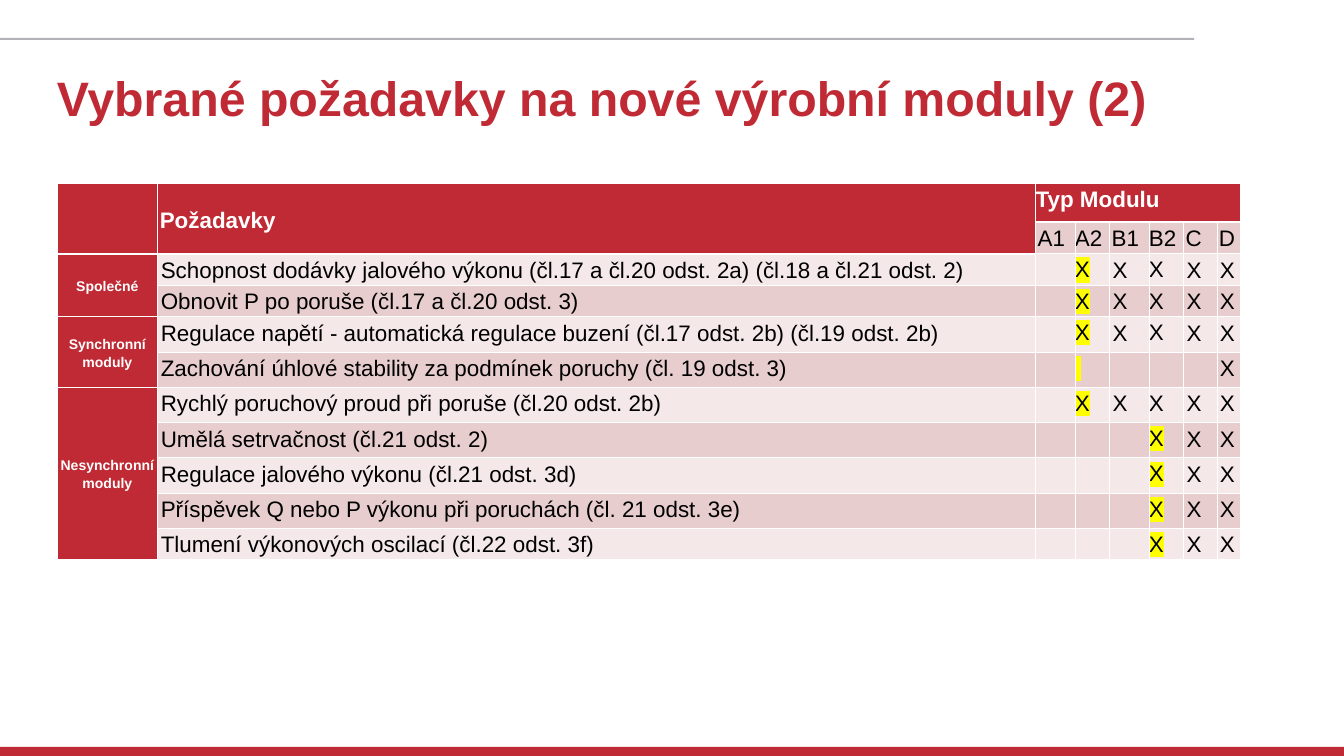
from pptx import Presentation
from pptx.dml.color import RGBColor
from pptx.enum.shapes import MSO_SHAPE
from pptx.enum.text import MSO_ANCHOR, PP_ALIGN
from pptx.util import Inches, Pt
from lxml.etree import SubElement
from pptx.oxml import parse_xml
from pptx.oxml.ns import qn, nsdecls

RED, GRAY, WHITE, BLACK = "BF2A34", "B1B2B7", "FFFFFF", "000000"
DARK, LIGHT, GLOW = "E8CDCE", "F4E8E8", "FFFF00"
COLS = [7.5, 65.32, 2.92, 2.59, 2.92, 2.59, 2.47, 1.72]
ROWS = [5.13] + [4.13] * 3 + [4.67] * 6 + [4.13]
TYPES = ["A1", "A2", "B1", "B2", "C", "D"]
TIGHT = (3, 5)
GROUPS = [
    ("Společné", [
        ("Schopnost dodávky jalového výkonu (čl.17 a čl.20 odst. 2a) (čl.18 a čl.21 odst. 2)", "-HXXXX"),
        ("Obnovit P po poruše (čl.17 a čl.20 odst. 3)", "-HXXXX")]),
    ("Synchronní moduly", [
        ("Regulace napětí - automatická regulace buzení (čl.17 odst. 2b) (čl.19 odst. 2b)", "-HXXXX"),
        ("Zachování úhlové stability za podmínek poruchy (čl. 19 odst. 3)", "-S---X")]),
    ("Nesynchronní moduly", [
        ("Rychlý poruchový proud při poruše (čl.20 odst. 2b)", "-HXXXX"),
        ("Umělá setrvačnost (čl.21 odst. 2)", "---HXX"),
        ("Regulace jalového výkonu (čl.21 odst. 3d)", "---HXX"),
        ("Příspěvek Q nebo P výkonu při poruchách (čl. 21 odst. 3e)", "---HXX"),
        ("Tlumení výkonových oscilací (čl.22 odst. 3f)", "---HXX")]),
]
MARKS = {"-": ("", None), "X": ("X", None), "H": ("X", GLOW), "S": (" ", GLOW)}


def color(code):
    return RGBColor.from_string(code)


class Deck:
    font = "Arial"

    def __init__(self, wide, high):
        self.prs = Presentation()
        self.wide, self.high = Inches(wide), Inches(high)
        self.prs.slide_width, self.prs.slide_height = self.wide, self.high
        self.slide = self.prs.slides.add_slide(self.prs.slide_layouts[6])

    def across(self, share):
        return int(self.wide * share / 100)

    def down(self, share):
        return int(self.high * share / 100)

    def place(self, x, y, w, h):
        return self.across(x), self.down(y), self.across(w), self.down(h)

    def bar(self, area, fill):
        shape = self.slide.shapes.add_shape(MSO_SHAPE.RECTANGLE, *self.place(*area))
        shape.shadow.inherit = False
        shape.fill.solid()
        shape.fill.fore_color.rgb = color(fill)
        shape.line.fill.background()

    def label(self, para, text, size, ink, bold=False, glow=None):
        run = para.add_run()
        run.text = text
        form = {"name": self.font, "size": Pt(size), "bold": bold}
        for key, value in form.items():
            setattr(run.font, key, value)
        run.font.color.rgb = color(ink)
        if glow:
            fill = run._r.get_or_add_rPr().find(qn("a:solidFill"))
            fill.addnext(parse_xml(
                f'<a:highlight {nsdecls("a")}><a:srgbClr val="{glow}"/></a:highlight>'))

    def title(self, area, text):
        frame = self.slide.shapes.add_textbox(*self.place(*area)).text_frame
        form = {"word_wrap": True, "margin_left": 0, "margin_top": 0,
                "margin_right": 0, "margin_bottom": 0}
        for key, value in form.items():
            setattr(frame, key, value)
        self.label(frame.paragraphs[0], text, 69, RED, True)

    def table(self, x, y, cols, rows):
        area = self.place(x, y, sum(cols), sum(rows))
        grid = self.slide.shapes.add_table(len(rows), len(cols), *area).table
        for col, share in zip(grid.columns, cols):
            col.width = self.across(share)
        for row, share in zip(grid.rows, rows):
            row.height = self.down(share)
        return grid

    def cell(self, cell, fill, text="", pad=0.06, thick=1, size=32, ink=BLACK,
             bold=False, glow=None, align=PP_ALIGN.LEFT, anchor=MSO_ANCHOR.TOP):
        props = cell._tc.get_or_add_tcPr()
        for side in "LRTB":
            width = Pt(thick if side == "B" else 1)
            line = SubElement(props, qn(f"a:ln{side}"), w=str(int(width)))
            paint = SubElement(line, qn("a:solidFill"))
            SubElement(paint, qn("a:srgbClr"), val=WHITE)
        cell.fill.solid()
        cell.fill.fore_color.rgb = color(fill)
        form = {"margin_left": Inches(pad), "margin_right": Inches(pad),
                "margin_top": Inches(0.01 if pad else 0), "margin_bottom": 0,
                "vertical_anchor": anchor}
        for key, value in form.items():
            setattr(cell, key, value)
        para = cell.text_frame.paragraphs[0]
        para.alignment, para.line_spacing = align, 1.15
        if text:
            self.label(para, text, size, ink, bold, glow)

    def head(self, grid):
        look = {"fill": RED, "thick": 3, "ink": WHITE, "bold": True}
        for col in range(len(COLS)):
            text = {1: "Požadavky", 2: "Typ Modulu"}.get(col, "")
            self.cell(grid.cell(0, col), text=text, pad=0.04 if col < 2 else 0,
                      anchor=MSO_ANCHOR.MIDDLE if col < 2 else MSO_ANCHOR.TOP, **look)
        for col in (0, 1):
            self.cell(grid.cell(1, col), **look)
            grid.cell(0, col).merge(grid.cell(1, col))
        grid.cell(0, 2).merge(grid.cell(0, len(COLS) - 1))
        for col, name in enumerate(TYPES, 2):
            self.cell(grid.cell(1, col), DARK, name, 0 if col in TIGHT else 0.04)

    def body(self, grid):
        row = 2
        for name, items in GROUPS:
            first = row
            for text, marks in items:
                fill = DARK if row % 2 else LIGHT
                self.cell(grid.cell(row, 0), RED, name if row == first else "", size=20,
                          ink=WHITE, bold=True, align=PP_ALIGN.CENTER,
                          anchor=MSO_ANCHOR.MIDDLE)
                self.cell(grid.cell(row, 1), fill, text)
                for col, mark in enumerate(marks, 2):
                    sign, glow = MARKS[mark]
                    self.cell(grid.cell(row, col), fill, sign,
                              0 if col in TIGHT else 0.06, glow=glow)
                row += 1
            grid.cell(first, 0).merge(grid.cell(row - 1, 0))


def main():
    deck = Deck(26.67, 15)
    deck.bar((0, 98.8, 100, 1.2), RED)
    deck.bar((0, 5, 88.86, 0.27), GRAY)
    deck.title((4.24, 9.07, 92.69, 11), "Vybrané požadavky na nové výrobní moduly (2)")
    grid = deck.table(4.24, 24.27, COLS, ROWS)
    deck.head(grid)
    deck.body(grid)
    deck.prs.save("out.pptx")


if __name__ == "__main__":
    main()
